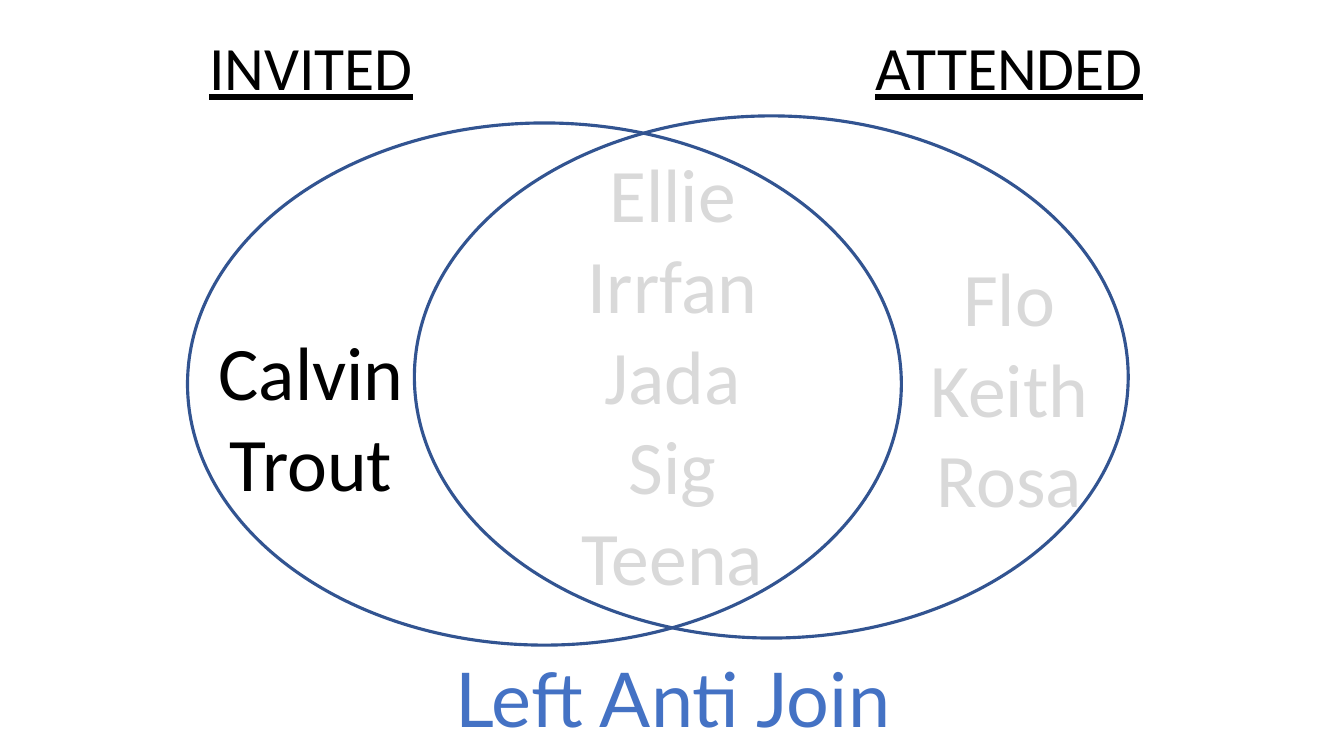
from pptx import Presentation
from pptx.dml.color import RGBColor
from pptx.enum.shapes import MSO_SHAPE as Shape
from pptx.enum.text import MSO_AUTO_SIZE as AutoSize, PP_ALIGN as Align
from pptx.util import Inches, Pt

COLORS = {"kept": "000000", "dropped": "D9D9D9", "outline": "325491", "title": "4472C4"}
HEADING_SIZE, NAME_SIZE = 44, 54
HEADING_LINE = HEADING_SIZE * 1.2

deck = Presentation()
deck.slide_width, deck.slide_height = Inches(13.33), Inches(7.5)
page = deck.slides.add_slide(deck.slide_layouts[6])


def add_box(left, top, width, height):
    box = page.shapes.add_textbox(Inches(left), Inches(top), Inches(width), Inches(height))
    box.text_frame.word_wrap = False
    box.text_frame.auto_size = AutoSize.SHAPE_TO_FIT_TEXT
    return box.text_frame


def add_line(frame, text, color, size=NAME_SIZE, font="Calibri", underline=False, gap=0):
    """Write one centred line, using the frame's first paragraph while it is empty."""
    first = frame.paragraphs[0]
    para = frame.add_paragraph() if first.runs else first
    para.alignment = Align.CENTER
    para.space_before = Pt(gap)
    span = para.add_run()
    span.text = text
    span.font.name = font
    span.font.size = Pt(size)
    span.font.underline = underline
    span.font.color.rgb = RGBColor.from_string(COLORS[color])


# Outer columns: heading, then names set down by a number of heading lines
columns = [
    ("ATTENDED", (8.57, 0.24, 2.88, 5.05), 2, "dropped", ["Flo", "Keith", "Rosa"]),
    ("INVITED", (1.96, 0.24, 2.25, 4.88), 3, "kept", ["Calvin", "Trout"]),
]
for heading, place, lines_down, color, names in columns:
    frame = add_box(*place)
    add_line(frame, heading, "kept", HEADING_SIZE, underline=True)
    for index, name in enumerate(names):
        add_line(frame, name, color, gap=0 if index else lines_down * HEADING_LINE)

# Names in both sets
frame = add_box(5.66, 1.41, 2.02, 4.64)
for name in ["Ellie", "Irrfan", "Jada", "Sig", "Teena"]:
    add_line(frame, name, "dropped")

# Overlapping sets
for left, top in [(1.86, 1.22), (4.11, 1.15)]:
    ellipse = page.shapes.add_shape(
        Shape.OVAL, Inches(left), Inches(top), Inches(7.08), Inches(5.18))
    ellipse.shadow.inherit = False
    ellipse.fill.background()
    ellipse.line.color.rgb = RGBColor.from_string(COLORS["outline"])
    ellipse.line.width = Pt(2.25)

add_line(add_box(3.75, 6.42, 5.85, 1.01), "Left Anti Join", "title", font="Lato")

deck.save("out.pptx")
